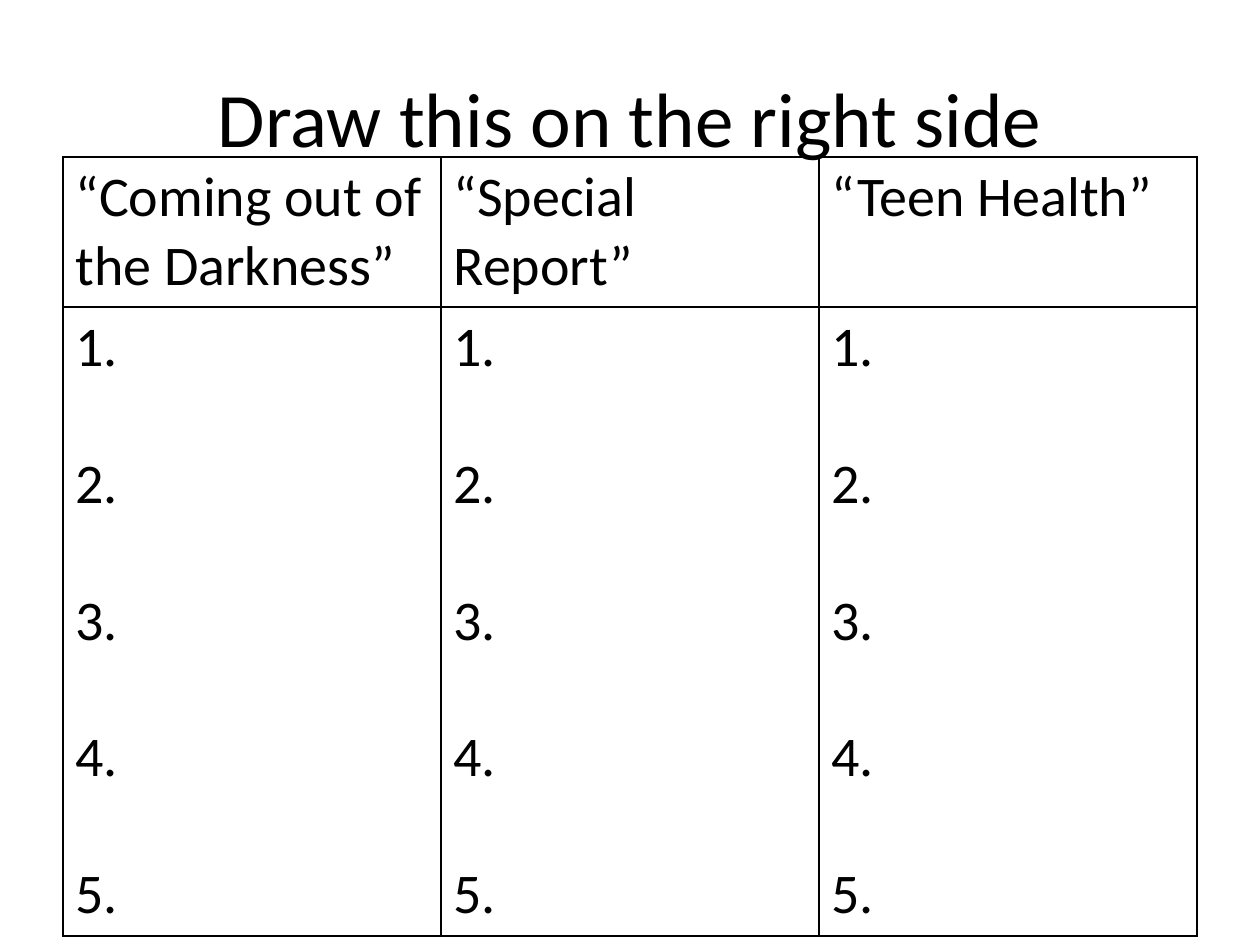
from pptx import Presentation
from pptx.dml.color import RGBColor
from pptx.enum.text import MSO_ANCHOR, MSO_AUTO_SIZE, PP_ALIGN
from pptx.oxml import parse_xml
from pptx.oxml.ns import nsdecls
from pptx.util import Pt

COLORS = {"ink": "000000", "paper": "FFFFFF"}
PX = 914400 / 126


def px(n):
    return round(n * PX)


def write(p, text, size=32, color="ink", align=PP_ALIGN.LEFT, before=0):
    p.alignment = align
    p.space_before = Pt(before)
    r = p.add_run()
    r.text = text
    r.font.name = "Calibri"
    r.font.size = Pt(size)
    r.font.bold = False
    r.font.color.rgb = RGBColor.from_string(COLORS[color])


prs = Presentation()
prs.slide_width, prs.slide_height = px(1260), px(945)
slide = prs.slides.add_slide(prs.slide_layouts[5])

title = slide.shapes.title
title.left, title.top, title.width, title.height = px(63), px(38), px(1134), px(157)
tf = title.text_frame
tf.auto_size = MSO_AUTO_SIZE.NONE
tf.vertical_anchor = MSO_ANCHOR.MIDDLE
write(tf.paragraphs[0], "Draw this on the right side", size=44, align=PP_ALIGN.CENTER)

articles = ["“Coming out of the Darkness”", "“Special Report”", "“Teen Health”"]
numbers = [f"{n}." for n in range(1, 6)]
heights = [150, 629]

table = slide.shapes.add_table(
    2, len(articles), px(63), px(157), px(1134), px(sum(heights))
).table
table.first_row = False
table.horz_banding = False
for row, height in zip(table.rows, heights):
    row.height = px(height)

for col, article in enumerate(articles):
    table.columns[col].width = px(378)
    for row, lines in enumerate([[article], numbers]):
        cell = table.cell(row, col)
        tf = cell.text_frame
        for i, line in enumerate(lines):
            p = tf.add_paragraph() if i else tf.paragraphs[0]
            write(p, line, before=39 if i else 0)
        tcPr = cell._tc.get_or_add_tcPr()
        for side in ("lnL", "lnR", "lnT", "lnB"):
            tcPr.append(parse_xml(
                f'<a:{side} {nsdecls("a")} w="{Pt(1)}"><a:solidFill>'
                f'<a:srgbClr val="{COLORS["ink"]}"/></a:solidFill></a:{side}>'
            ))
        cell.fill.background()

prs.save("out.pptx")
